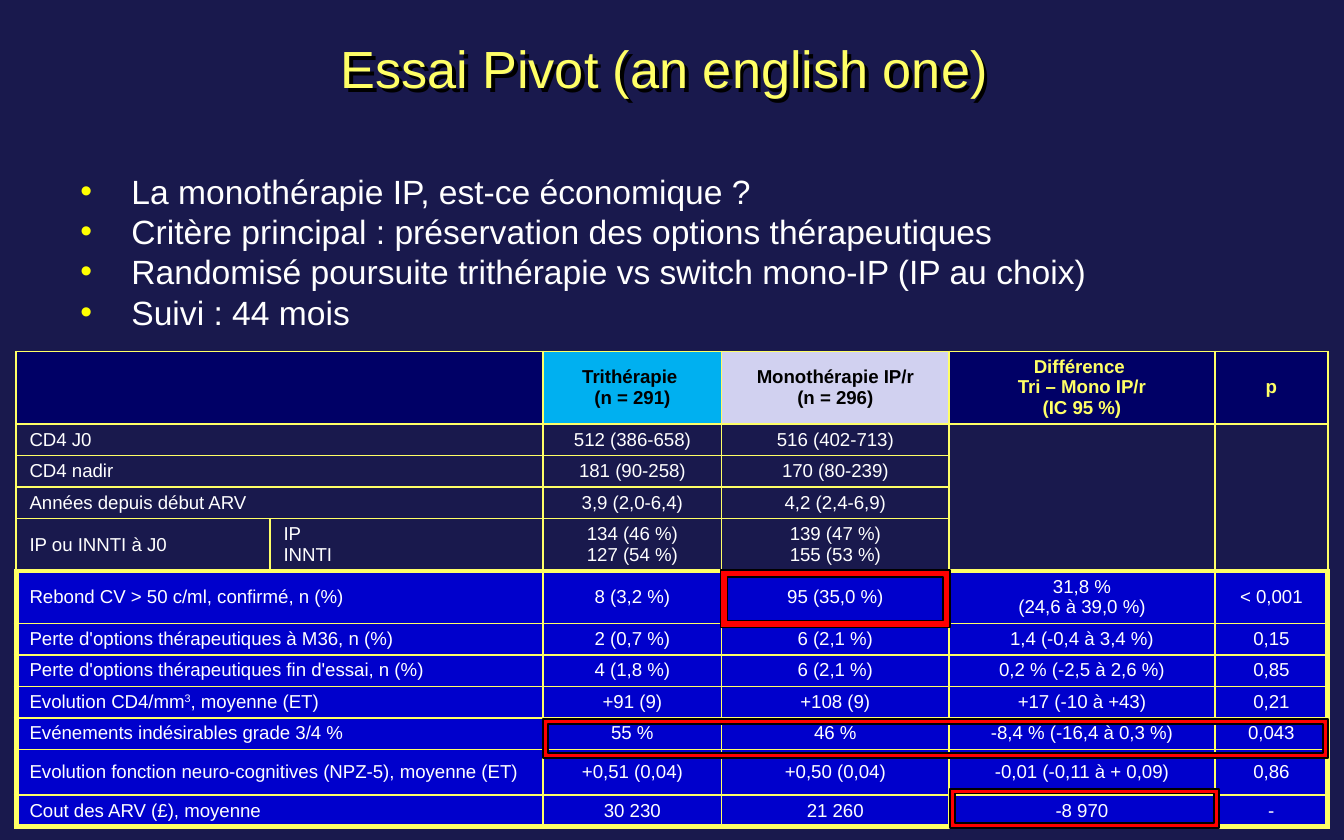
from dataclasses import dataclass
from typing import Optional
from lxml.etree import SubElement
from pptx import Presentation
from pptx.dml.color import RGBColor
from pptx.enum.shapes import MSO_SHAPE as Shape
from pptx.enum.text import MSO_ANCHOR as Anchor, PP_ALIGN as Align
from pptx.oxml import parse_xml
from pptx.oxml.ns import qn
from pptx.util import Inches, Pt

COLS, ROWS = 1000, 625
WIDE, HIGH = Inches(10), Inches(6.25)
NS = 'xmlns:a="http://schemas.openxmlformats.org/drawingml/2006/main"'
FONT = "Arial"
NIGHT, NAVY, BLUE = "19194D", "000066", "0000CC"
GOLD, WHITE, BLACK, RED = "FFFF66", "FFFFFF", "000000", "FF0000"
FIRST = 5
SLIM, TALL = 23.5, 39


@dataclass
class Box:
    """A place on the slide grid."""
    col: float
    row: float
    cols: float
    rows: float

    def spot(self) -> tuple[int, int, int, int]:
        """Return left, top, width and height in slide units."""
        return across(self.col), down(self.row), across(self.cols), down(self.rows)


@dataclass
class Row:
    """One table row: height in grid rows, label and values."""
    rows: float
    label: str
    vals: tuple[str, ...]
    sub: Optional[str] = None


@dataclass
class Head:
    """Fill and text colour of a heading cell."""
    fill: str
    ink: str


WIDTHS = (189, 203, 133, 169, 198, 84)
HEADS = (Head(NAVY, GOLD), Head(NAVY, GOLD), Head("00B0F0", BLACK),
         Head("D1D1F0", BLACK), Head(NAVY, GOLD), Head(NAVY, GOLD))
DATA = (
    Row(54, "", ("Trithérapie \n(n = 291)", "Monothérapie IP/r\n(n = 296)",
                 "Différence \nTri – Mono IP/r\n(IC 95 %)", "p")),
    Row(SLIM, "CD4 J0", ("512 (386-658)", "516 (402-713)")),
    Row(SLIM, "CD4 nadir", ("181 (90-258)", "170 (80-239)")),
    Row(SLIM, "Années depuis début ARV", ("3,9 (2,0-6,4)", "4,2 (2,4-6,9)")),
    Row(TALL, "IP ou INNTI à J0", ("134 (46 %)\n127 (54 %)", "139 (47 %)\n155 (53 %)"),
        "IP\nINNTI"),
    Row(TALL, "Rebond CV > 50 c/ml, confirmé, n (%)",
        ("8 (3,2 %)", "95 (35,0 %)", "31,8 %\n(24,6 à 39,0 %)", "< 0,001")),
    Row(SLIM, "Perte d'options thérapeutiques à M36, n (%)",
        ("2 (0,7 %)", "6 (2,1 %)", "1,4 (-0,4 à 3,4 %)", "0,15")),
    Row(SLIM, "Perte d'options thérapeutiques fin d'essai, n (%)",
        ("4 (1,8 %)", "6 (2,1 %)", "0,2 % (-2,5 à 2,6 %)", "0,85")),
    Row(SLIM, "Evolution CD4/mm|3|, moyenne (ET)",
        ("+91 (9)", "+108 (9)", "+17 (-10 à +43)", "0,21")),
    Row(SLIM, "Evénements indésirables grade 3/4 %",
        ("55 %", "46 %", "-8,4 % (-16,4 à 0,3 %)", "0,043")),
    Row(34, "Evolution fonction neuro-cognitives (NPZ-5), moyenne (ET)",
        ("+0,51 (0,04)", "+0,50 (0,04)", "-0,01 (-0,11 à + 0,09)", "0,86")),
    Row(SLIM, "Cout des ARV (£), moyenne", ("30 230", "21 260", "-8 970", "-")),
)
POINTS = """La monothérapie IP, est-ce économique ?
Critère principal : préservation des options thérapeutiques
Randomisé poursuite trithérapie vs switch mono-IP (IP au choix)
Suivi : 44 mois"""
FRAMES = (Box(536, 424, 171, 43), Box(707, 587, 200, 29), Box(404, 535, 584, 29))


def across(cols: float) -> int:
    """Turn grid columns into a length."""
    return int(WIDE * cols / COLS)


def down(rows: float) -> int:
    """Turn grid rows into a length."""
    return int(HIGH * rows / ROWS)


def paint(form, tint: str) -> None:
    """Set a solid colour on a fill."""
    form.solid()
    form.fore_color.rgb = RGBColor.from_string(tint)


def write(frame, text: str, *, size: float, ink: str = WHITE, bold: bool = False,
          align=Align.LEFT, lead=None, dot: Optional[str] = None) -> None:
    """Write lines as paragraphs; text between bars is raised."""
    for num, line in enumerate(text.split("\n")):
        para = frame.add_paragraph() if num else frame.paragraphs[0]
        if dot:
            props = para._p.get_or_add_pPr()
            props.set("marL", str(across(38)))
            props.set("indent", str(-across(38)))
            props.append(parse_xml(f'<a:buClr {NS}><a:srgbClr val="{dot}"/></a:buClr>'))
            props.append(parse_xml(f'<a:buFont {NS} typeface="{FONT}"/>'))
            props.append(parse_xml(f'<a:buChar {NS} char="•"/>'))
        para.alignment = align
        if lead:
            para.line_spacing = lead
        if not line:
            SubElement(para._p, qn("a:endParaRPr"), sz=str(int(size * 100)))
            continue
        for part, words in enumerate(line.split("|")):
            run = para.add_run()
            run.text = words
            font = run.font
            font.name, font.size, font.bold = FONT, Pt(size), bold
            paint(font.fill, ink)
            if part % 2:
                run._r.get_or_add_rPr().set("baseline", "30000")


def label(slide, box: Box, text: str, anchor=Anchor.TOP, shade: bool = False,
          **style) -> None:
    """Add a text box on the grid, with a text shadow if asked."""
    shape = slide.shapes.add_textbox(*box.spot())
    if shade:
        shape._element.spPr.append(parse_xml(
            f'<a:effectLst {NS}><a:outerShdw dist="38100" dir="2700000">'
            f'<a:srgbClr val="{BLACK}"/></a:outerShdw></a:effectLst>'))
    frame = shape.text_frame
    frame.word_wrap = True
    frame.vertical_anchor = anchor
    write(frame, text, **style)


def edge(cell, row: int, col: int) -> None:
    """Draw cell borders, thick around the results block."""
    block, last = row >= FIRST, len(DATA) - 1
    thick = {"L": block and col == 0, "R": block and col == len(WIDTHS) - 1,
             "T": row == FIRST, "B": row in (FIRST - 1, last)}
    if cell.is_merge_origin and cell.span_height > 1:
        thick["B"] = True
    for side in ("R" if cell.is_spanned else "LRTB"):
        width = Pt(3 if thick[side] else 1)
        cell._tc.get_or_add_tcPr().append(parse_xml(
            f'<a:ln{side} {NS} w="{width}"><a:solidFill><a:srgbClr val="{GOLD}"/>'
            f'</a:solidFill></a:ln{side}>'))


def grid(slide) -> None:
    """Build the table of results."""
    box = Box(12, 261.5, sum(WIDTHS), sum(row.rows for row in DATA))
    table = slide.shapes.add_table(len(DATA), len(WIDTHS), *box.spot()).table
    table.first_row = table.horz_banding = False
    for num, width in enumerate(WIDTHS):
        table.columns[num].width = across(width)
    for num, item in enumerate(DATA):
        table.rows[num].height = down(item.rows)
        if item.sub is None:
            table.cell(num, 0).merge(table.cell(num, 1))
    for col in (4, 5):
        table.cell(1, col).merge(table.cell(FIRST - 1, col))
    for num, item in enumerate(DATA):
        texts = (item.label, item.sub or "", *item.vals, "", "")
        for col, text in enumerate(texts[:len(WIDTHS)]):
            cell = table.cell(num, col)
            cell.margin_left = cell.margin_right = across(10)
            cell.margin_top = cell.margin_bottom = down(3.8)
            cell.vertical_anchor = Anchor.MIDDLE
            edge(cell, num, col)
            if num == 0:
                paint(cell.fill, HEADS[col].fill)
            elif num >= FIRST:
                paint(cell.fill, BLUE)
            else:
                cell.fill.background()
            write(cell.text_frame, text, size=10, bold=num == 0, lead=Pt(11),
                  ink=WHITE if num else HEADS[col].ink,
                  align=Align.CENTER if col > 1 else Align.LEFT)


def ring(slide, box: Box) -> None:
    """Add a red frame around key values."""
    shape = slide.shapes.add_shape(Shape.FRAME, *box.spot())
    shape.shadow.inherit = False
    paint(shape.fill, RED)
    paint(shape.line.fill, BLACK)
    shape.line.width = Pt(0.75)


def main() -> None:
    """Build and save the slide."""
    deck = Presentation()
    deck.slide_width, deck.slide_height = WIDE, HIGH
    slide = deck.slides.add_slide(deck.slide_layouts[6])
    paint(slide.background.fill, NIGHT)
    label(slide, Box(12, 11, 964, 85), "Essai Pivot (an english one)", Anchor.MIDDLE,
          shade=True, size=28, ink=GOLD, align=Align.CENTER, lead=0.9)
    label(slide, Box(50, 122, 930, 466), POINTS, size=18, dot="FFFF00")
    grid(slide)
    for box in FRAMES:
        ring(slide, box)
    deck.save("out.pptx")


if __name__ == "__main__":
    main()
